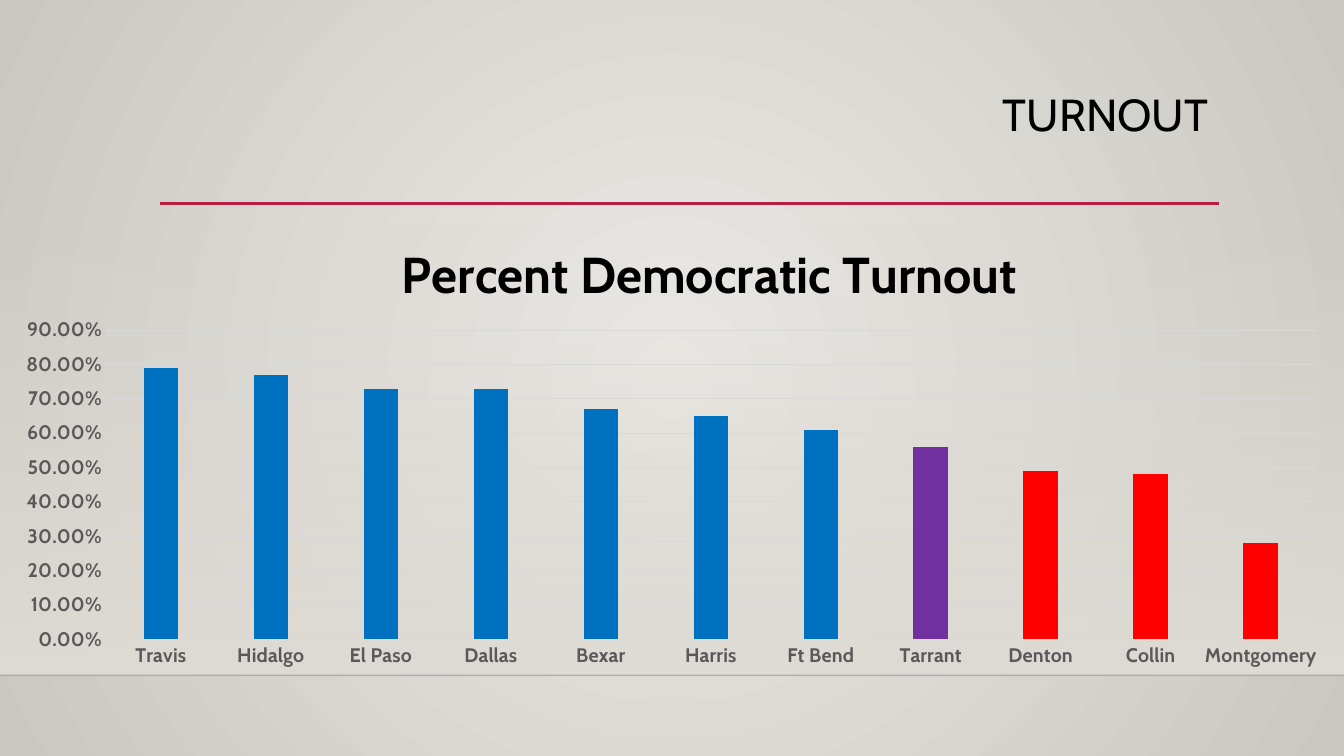
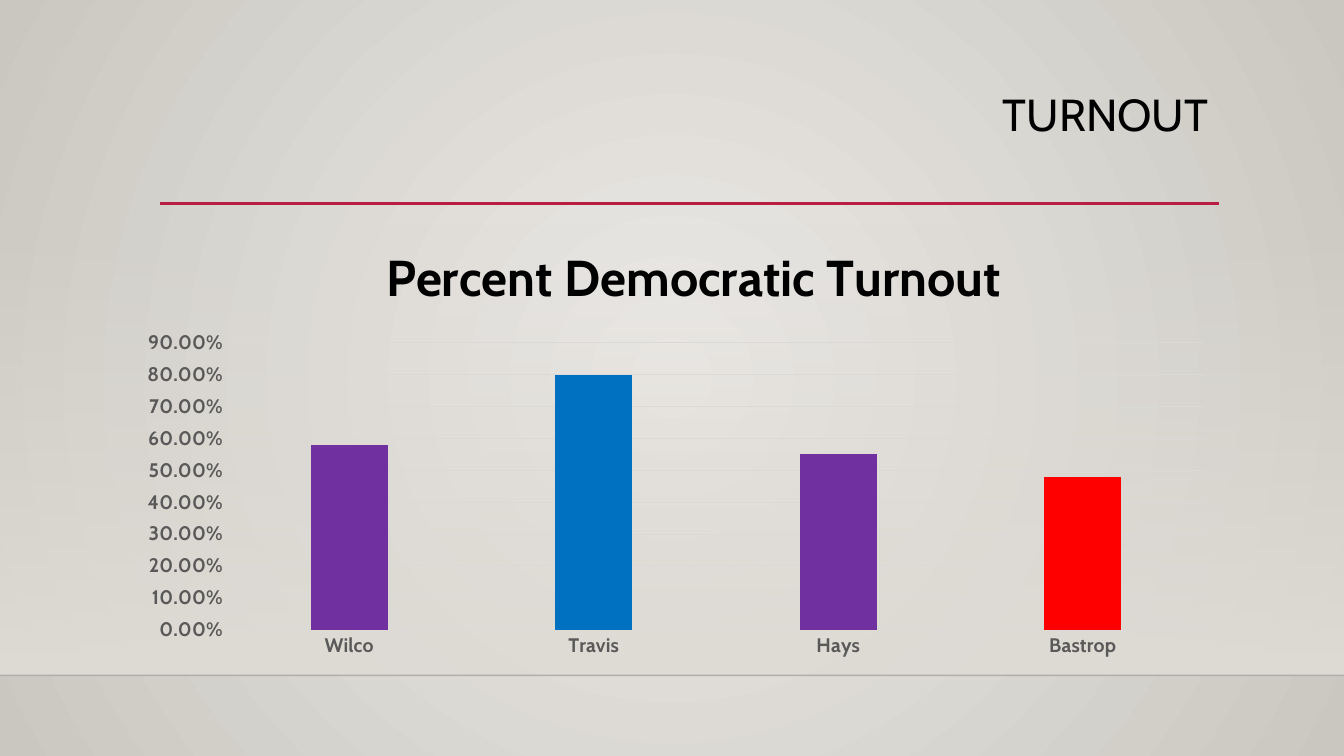
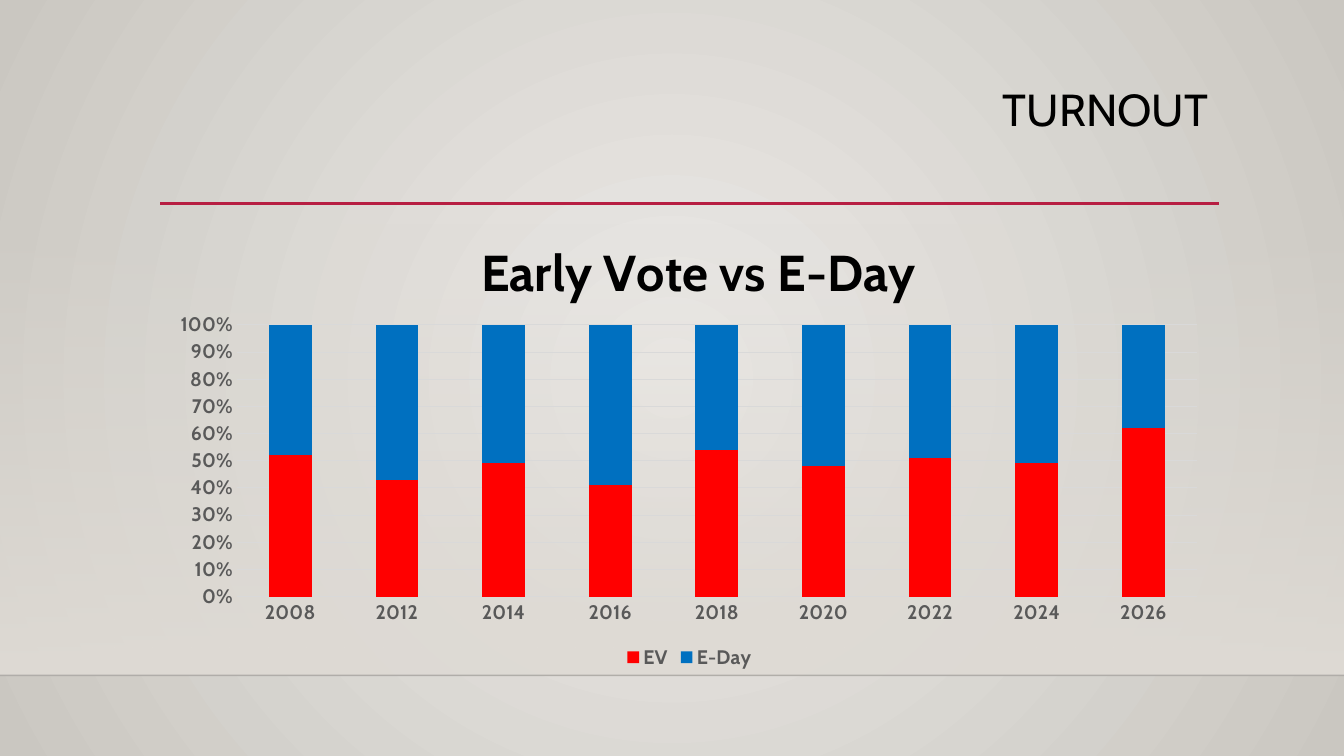
from lxml import etree
from pptx import Presentation
from pptx.chart.data import CategoryChartData
from pptx.dml.color import RGBColor
from pptx.enum.chart import XL_CHART_TYPE, XL_LEGEND_POSITION, XL_TICK_MARK
from pptx.enum.shapes import MSO_CONNECTOR, MSO_SHAPE
from pptx.enum.text import MSO_ANCHOR, PP_ALIGN
from pptx.oxml.ns import qn
from pptx.util import Cm, Pt

CLUSTERED = XL_CHART_TYPE.COLUMN_CLUSTERED
STACKED = XL_CHART_TYPE.COLUMN_STACKED_100
BOTTOM = XL_LEGEND_POSITION.BOTTOM
NO_TICK = XL_TICK_MARK.NONE
STRAIGHT = MSO_CONNECTOR.STRAIGHT
RECTANGLE = MSO_SHAPE.RECTANGLE
TOP = MSO_ANCHOR.TOP
RIGHT = PP_ALIGN.RIGHT

FONT = "Cabin"
COLORS = {
    "center": "ECEAE7", "edge": "CAC7C1", "band": "DFDBD5", "floor": "000001",
    "accent": "B71E42", "text": "000000", "label": "595959", "grid": "D9D9D9",
    "blue": "0070C0", "purple": "7030A0", "red": "FF0000",
}

# Lengths in centimetres
WIDTH, HEIGHT = 33.87, 19.05
RULE_LEFT, RULE_RIGHT, RULE_TOP = 4.04, 30.73, 5.13
BAND_TOP, FLOOR = 5.61, 17.02
TITLE_WIDTH, TITLE_HEIGHT = 26.67, 2.92

# frame and plot: left, top, width, height; caption_at: left, top
SLIDES = [
    {
        "title": "TURNOUT", "title_top": 2.21,
        "caption": "Percent Democratic Turnout", "caption_at": (9.9, 5.8),
        "frame": (0, 5.13, 33.87, 11.94), "plot": (2.67, 8.32, 30.49, 7.79),
        "type": CLUSTERED, "gap": 219, "overlap": -27,
        "format": "0.00%", "maximum": 0.9, "legend": False,
        "categories": ["Travis", "Hidalgo", "El Paso", "Dallas", "Bexar", "Harris",
                       "Ft Bend", "Tarrant", "Denton", "Collin", "Montgomery"],
        "series": [("Series 1", "blue",
                    [0.79, 0.77, 0.73, 0.73, 0.67, 0.65, 0.61, 0.56, 0.49, 0.48, 0.28])],
        "points": {7: "purple", 8: "red", 9: "red", 10: "red"},
    },
    {
        "title": "TURNOUT", "title_top": 2.21,
        "caption": "Percent Democratic Turnout", "caption_at": (9.5, 5.87),
        "frame": (3.15, 5.46, 27.76, 11.35), "plot": (5.72, 8.64, 24.65, 7.23),
        "type": CLUSTERED, "gap": 219, "overlap": -27,
        "format": "0.00%", "maximum": 0.9, "legend": False,
        "categories": ["Wilco", "Travis", "Hays", "Bastrop"],
        "series": [("Series 1", "accent", [0.58, 0.8, 0.55, 0.48])],
        "points": {0: "purple", 1: "blue", 2: "purple", 3: "red"},
    },
    {
        "title": "TURNOUT", "title_top": 2.08,
        "caption": "Early Vote vs E-Day", "caption_at": (11.9, 5.75),
        "frame": (4.04, 4.98, 26.67, 11.99), "plot": (5.97, 8.19, 24.19, 6.85),
        "type": STACKED, "gap": 150, "overlap": 100,
        "format": "0%", "maximum": None, "legend": True,
        "categories": ["2008", "2012", "2014", "2016", "2018",
                       "2020", "2022", "2024", "2026"],
        "series": [("EV", "red", [52, 43, 49, 41, 54, 48, 51, 49, 62]),
                   ("E-Day", "blue", [48, 57, 51, 59, 46, 52, 49, 51, 38])],
        "points": {},
    },
]


def rgb(name):
    return RGBColor.from_string(COLORS[name])


def style_font(font, size, color, bold=False):
    font.name = FONT
    font.size = Pt(size)
    font.bold = bold
    font.color.rgb = rgb(color)


def fill_solid(fill, color):
    fill.solid()
    fill.fore_color.rgb = rgb(color)


def fill_gradient(fill, first, last):
    fill.gradient()
    for stop, position, color in zip(fill.gradient_stops, (0, 1), (first, last)):
        stop.position = position
        stop.color.rgb = rgb(color)


def set_first_opacity(shape, percent):
    """Set the opacity of the first explicit colour in a shape."""
    color = next(shape.element.iter(qn("a:srgbClr")))
    etree.SubElement(color, qn("a:alpha"), val=str(percent * 1000))


def set_background(master):
    fill_gradient(master.background.fill, "center", "edge")
    gradient = next(master.element.iter(qn("a:gradFill")))
    gradient.remove(gradient.find(qn("a:lin")))
    circle = etree.SubElement(gradient, qn("a:path"))
    circle.set("path", "circle")
    etree.SubElement(circle, qn("a:fillToRect"), {side: "50000" for side in "ltrb"})


def add_rule(page, left, right, top, color, weight):
    rule = page.shapes.add_connector(STRAIGHT, Cm(left), Cm(top), Cm(right), Cm(top))
    rule.line.color.rgb = rgb(color)
    rule.line.width = Pt(weight)
    etree.SubElement(rule.element.spPr, qn("a:effectLst"))
    return rule


def add_backdrop(page):
    band = page.shapes.add_shape(RECTANGLE, 0, Cm(BAND_TOP), Cm(WIDTH), Cm(FLOOR - BAND_TOP))
    band.shadow.inherit = False
    fill_gradient(band.fill, "band", "band")
    band.fill.gradient_angle = 270
    band.line.fill.background()
    set_first_opacity(band, 0)
    floor = add_rule(page, 0, WIDTH, FLOOR, "floor", 1)
    set_first_opacity(floor, 20)
    add_rule(page, RULE_LEFT, RULE_RIGHT, RULE_TOP, "accent", 2.5)


def set_title(page, text, top):
    title = page.shapes.title
    title.left, title.top = Cm(RULE_LEFT), Cm(top)
    title.width, title.height = Cm(TITLE_WIDTH), Cm(TITLE_HEIGHT)
    title.text_frame.vertical_anchor = TOP
    para = title.text_frame.paragraphs[0]
    para.alignment = RIGHT
    para.line_spacing = 0.9
    span = para.add_run()
    span.text = text
    style_font(span.font, 32, "text")


def place_in_chart(node, index, frame, place, inner=False):
    """Fix a chart part at a place given in slide centimetres."""
    layout = node.find(qn("c:layout"))
    if layout is not None:
        node.remove(layout)
    layout = etree.Element(qn("c:layout"))
    node.insert(index, layout)
    manual = etree.SubElement(layout, qn("c:manualLayout"))
    if inner:
        etree.SubElement(manual, qn("c:layoutTarget"), val="inner")
    for axis in "xy":
        etree.SubElement(manual, qn(f"c:{axis}Mode"), val="edge")
    left, top, width, height = frame
    shares = [(place[0] - left) / width, (place[1] - top) / height]
    if inner:
        shares += [place[2] / width, place[3] / height]
    for key, share in zip("xywh", shares):
        etree.SubElement(manual, qn(f"c:{key}"), val=f"{share:.4f}")


def style_axes(chart, number_format, maximum):
    category, value = chart.category_axis, chart.value_axis
    for axis in (category, value):
        axis.major_tick_mark = axis.minor_tick_mark = NO_TICK
        style_font(axis.tick_labels.font, 14, "label", True)
    value.has_major_gridlines = True
    value.format.line.fill.background()
    for line in (category.format.line, value.major_gridlines.format.line):
        line.color.rgb = rgb("grid")
        line.width = Pt(0.75)
    value.tick_labels.number_format = number_format
    value.tick_labels.number_format_is_linked = False
    if maximum:
        value.minimum_scale, value.maximum_scale, value.major_unit = 0, maximum, 0.1


def add_turnout_chart(page, item):
    data = CategoryChartData()
    data.categories = item["categories"]
    for name, _, values in item["series"]:
        data.add_series(name, values)
    frame = item["frame"]
    chart = page.shapes.add_chart(item["type"], *map(Cm, frame), data).chart
    style_font(chart.font, 10, "text")
    style_axes(chart, item["format"], item["maximum"])

    plot = chart.plots[0]
    plot.vary_by_categories = False
    plot.gap_width, plot.overlap = item["gap"], item["overlap"]
    for series, (_, color, _) in zip(plot.series, item["series"]):
        fill_solid(series.format.fill, color)
        for index, point_color in item["points"].items():
            fill_solid(series.points[index].format.fill, point_color)

    chart.has_title = True
    span = chart.chart_title.text_frame.paragraphs[0].add_run()
    span.text = item["caption"]
    style_font(span.font, 36, "text", True)
    chart.has_legend = item["legend"]
    if chart.has_legend:
        chart.legend.position = BOTTOM
        chart.legend.include_in_layout = False
        style_font(chart.legend.font, 14, "label", True)

    place_in_chart(next(chart.element.iter(qn("c:title"))), 1, frame, item["caption_at"])
    place_in_chart(next(chart.element.iter(qn("c:plotArea"))), 0, frame, item["plot"], True)


def main():
    deck = Presentation()
    deck.slide_width, deck.slide_height = Cm(WIDTH), Cm(HEIGHT)
    set_background(deck.slide_master)
    title_only = deck.slide_layouts[5]
    for item in SLIDES:
        page = deck.slides.add_slide(title_only)
        add_backdrop(page)
        set_title(page, item["title"], item["title_top"])
        add_turnout_chart(page, item)
    deck.save("out.pptx")


if __name__ == "__main__":
    main()
